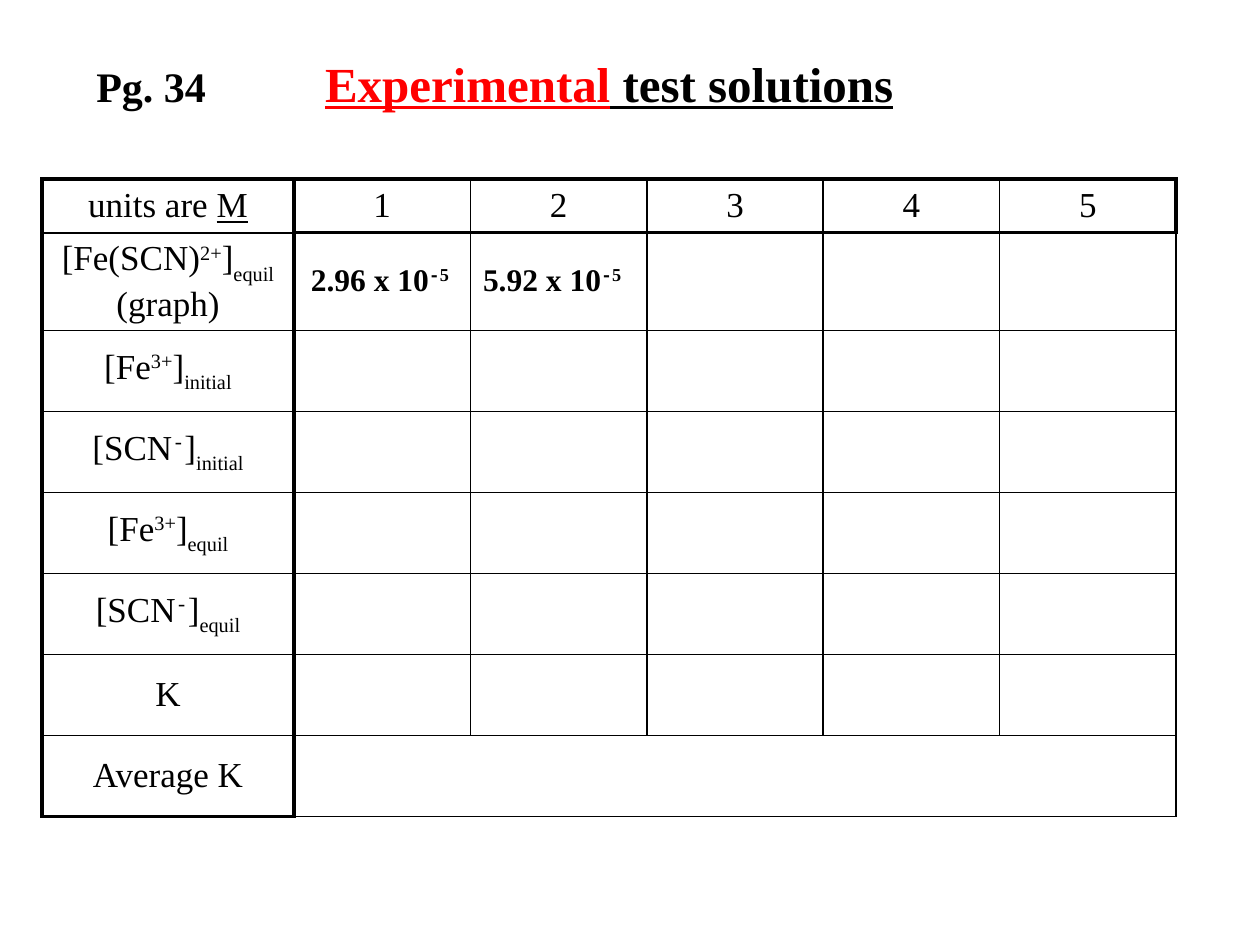
from dataclasses import dataclass

from lxml.etree import SubElement
from pptx import Presentation
from pptx.dml.color import RGBColor
from pptx.enum.text import MSO_ANCHOR, PP_ALIGN
from pptx.oxml.ns import qn
from pptx.util import Emu, Pt


@dataclass(frozen=True)
class Theme:
    ink: str = "000000"
    accent: str = "FF0000"
    font: str = "Times New Roman"
    minus_font: str = "Courier New"
    title: int = 28
    page: int = 24
    label: int = 20
    value: int = 18
    thin: int = 1
    thick: int = 2


T = Theme()
PX = 914400 / 126
BASELINE = {"sup": "30000", "sub": "-30000"}


def px(n):
    return Emu(round(n * PX))


def write(p, runs, size, bold=False):
    """Fill a paragraph with (text, style) runs; style is sup, sub, u, accent or empty."""
    for text, style in runs:
        r = p.add_run()
        r.text = text
        f = r.font
        f.size, f.bold = Pt(size), bold
        f.name = T.minus_font if text == "-" else T.font
        f.color.rgb = RGBColor.from_string(T.accent if "accent" in style else T.ink)
        if "u" in style.split():
            f.underline = True
        if style in BASELINE:
            r._r.get_or_add_rPr().set("baseline", BASELINE[style])


prs = Presentation()
prs.slide_width, prs.slide_height = px(1260), px(945)
s = prs.slides.add_slide(prs.slide_layouts[6])

# Table
iron = [("[Fe", ""), ("3+", "sup"), ("]", "")]
thiocyanate = [("[SCN", ""), ("-", "sup"), ("]", "")]
initial, equil = ("initial", "sub"), ("equil", "sub")
labels = [
    [("units are ", ""), ("M", "u")],
    [("[Fe(SCN)", ""), ("2+", "sup"), ("]", ""), equil, (" (graph)", "")],
    iron + [initial],
    thiocyanate + [initial],
    iron + [equil],
    thiocyanate + [equil],
    [("K", "")],
    [("Average K", "")],
]
contents = {(i, 0): runs for i, runs in enumerate(labels)}
contents.update({(0, j): [(str(j), "")] for j in range(1, 6)})
contents[1, 1] = [("2.96 x 10", ""), ("-", "sup"), ("5 ", "sup")]
contents[1, 2] = [("5.92 x 10", ""), ("-", "sup"), ("5", "sup")]

row_heights = [54, 97] + [81] * 6
rows, cols = len(row_heights), 6
last = rows - 1
gf = s.shapes.add_table(rows, cols, px(42), px(179), px(1134), px(sum(row_heights)))
tbl = gf.table
tbl.first_row = tbl.horz_banding = False
for i, h in enumerate(row_heights):
    tbl.rows[i].height = px(h)
for j in range(cols):
    tbl.columns[j].width = px(252 if j == 0 else (1134 - 252) / 5)
tbl.cell(last, 1).merge(tbl.cell(last, cols - 1))

for i in range(rows):
    for j in range(cols):
        cell = tbl.cell(i, j)
        cell.vertical_anchor = MSO_ANCHOR.MIDDLE
        thick_sides = {
            "lnL": j <= 1,
            "lnR": j == 0 or (i == 0 and j == cols - 1),
            "lnT": i == 0 or (i == 1 and j > 0),
            "lnB": (i == 0 and j > 0) or (i == last and j == 0),
        }
        for side, thick in thick_sides.items():
            width = Pt(T.thick if thick else T.thin)
            ln = SubElement(cell._tc.get_or_add_tcPr(), qn(f"a:{side}"), w=str(width))
            SubElement(SubElement(ln, qn("a:solidFill")), qn("a:srgbClr"), val=T.ink)
        cell.fill.background()
        if (i, j) in contents:
            p = cell.text_frame.paragraphs[0]
            p.alignment = PP_ALIGN.LEFT if (i, j) == (1, 2) else PP_ALIGN.CENTER
            is_value = i == 1 and j > 0
            write(p, contents[i, j], T.value if is_value else T.label, is_value)

# Headings
tf = s.shapes.add_textbox(px(325), px(53), px(662), px(59)).text_frame
tf.word_wrap = True
tf.vertical_anchor = MSO_ANCHOR.MIDDLE
tf.margin_left = tf.margin_right = tf.margin_top = tf.margin_bottom = 0
write(tf.paragraphs[0], [("Experimental", "accent u"), (" test solutions", "u")], T.title, True)

tf = s.shapes.add_textbox(px(84), px(54), px(136), px(63)).text_frame
tf.word_wrap = True
write(tf.paragraphs[0], [("Pg. 34", "")], T.page, True)

prs.save("out.pptx")
